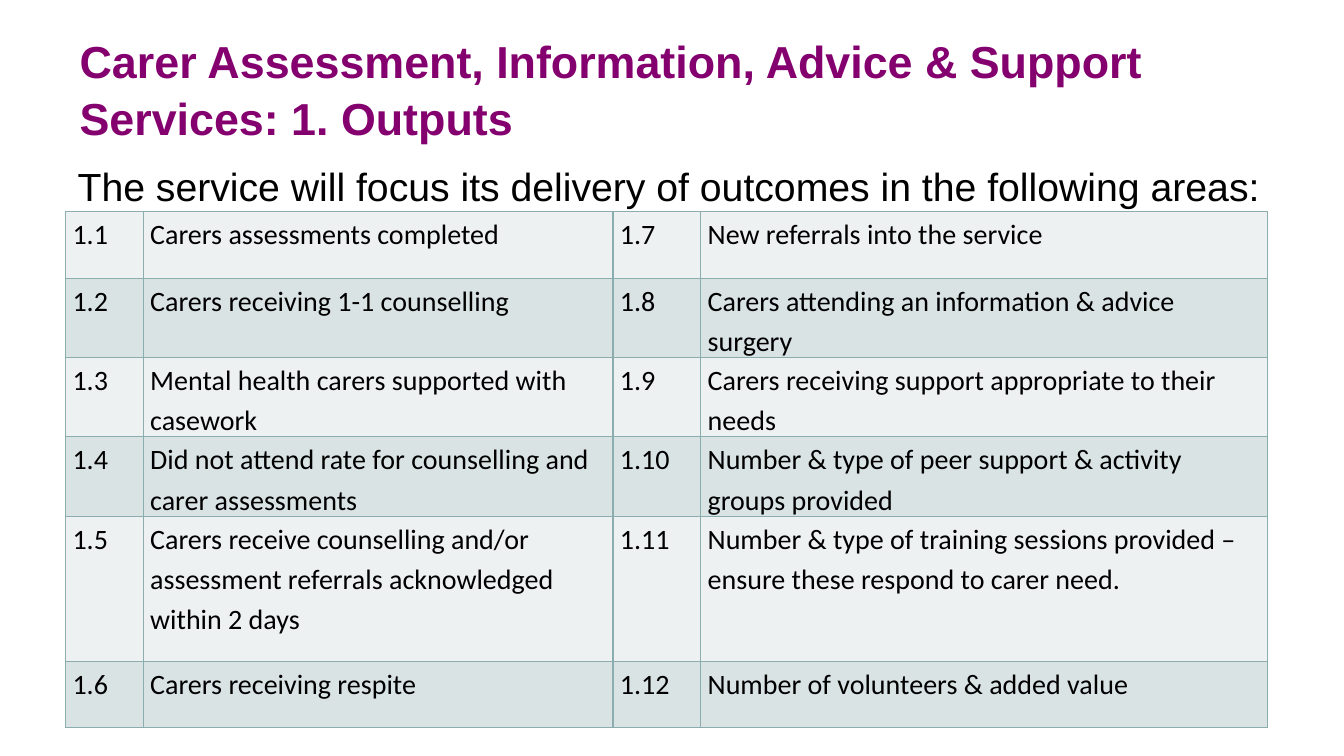
from dataclasses import dataclass

from lxml.etree import SubElement
from pptx import Presentation
from pptx.dml.color import RGBColor
from pptx.enum.text import MSO_ANCHOR
from pptx.oxml.ns import qn
from pptx.util import Inches, Pt


@dataclass(frozen=True)
class Theme:
    heading_font: str = "Arial"
    table_font: str = "Calibri"
    title_size: float = 32
    intro_size: float = 28
    table_size: float = 20
    title_color: str = "84006F"
    text_color: str = "000000"
    border_color: str = "8CADAE"
    bands: tuple = ("EEF1F2", "DAE3E3")


THEME = Theme()

TITLE = "Carer Assessment, Information, Advice & Support Services: 1. Outputs"
INTRO = "The service will focus its delivery of outcomes in the following areas:"
OUTPUTS = [
    "Carers assessments completed",
    "Carers receiving 1-1 counselling",
    "Mental health carers supported with casework",
    "Did not attend rate for counselling and carer assessments",
    "Carers receive counselling and/or assessment referrals acknowledged within 2 days",
    "Carers receiving respite",
    "New referrals into the service",
    "Carers attending an information & advice surgery",
    "Carers receiving support appropriate to their needs",
    "Number & type of peer support & activity groups provided",
    "Number & type of training sessions provided – ensure these respond to carer need.",
    "Number of volunteers & added value",
]
COLUMN_WIDTHS = [0.77, 4.66, 0.87, 5.62]
ROW_HEIGHTS = [0.66, 0.66, 0.66, 0.66, 1.44, 0.66]


def style_runs(p, font, size, color, bold=False):
    for r in p.runs:
        r.font.name = font
        r.font.size = Pt(size)
        r.font.bold = bold
        r.font.color.rgb = RGBColor.from_string(color)


def add_text(slide, box, text, size, color, bold=False,
             anchor=MSO_ANCHOR.TOP, inset=0.06, spacing=1.0):
    sp = slide.shapes.add_textbox(*map(Inches, box))
    tf = sp.text_frame
    tf.word_wrap = True
    tf.vertical_anchor = anchor
    tf.margin_left = tf.margin_right = Inches(0.12)
    tf.margin_top = tf.margin_bottom = Inches(inset)
    p = tf.paragraphs[0]
    p.text = text
    p.line_spacing = spacing
    style_runs(p, THEME.heading_font, size, color, bold)


def add_title(slide, box):
    add_text(slide, box, TITLE, THEME.title_size, THEME.title_color,
             bold=True, anchor=MSO_ANCHOR.MIDDLE, spacing=1.05)


def add_intro(slide, box):
    add_text(slide, box, INTRO, THEME.intro_size, THEME.text_color, inset=0.1)


def add_borders(cell):
    tcPr = cell._tc.get_or_add_tcPr()
    for side in ("lnL", "lnR", "lnT", "lnB"):
        ln = SubElement(tcPr, qn(f"a:{side}"), w=str(Pt(1)))
        fill = SubElement(ln, qn("a:solidFill"))
        SubElement(fill, qn("a:srgbClr"), val=THEME.border_color)


def fill_cell(cell, text, band):
    add_borders(cell)
    cell.fill.solid()
    cell.fill.fore_color.rgb = RGBColor.from_string(band)
    cell.margin_left = cell.margin_right = Inches(0.07)
    cell.margin_top = cell.margin_bottom = 0
    p = cell.text_frame.paragraphs[0]
    p.text = text
    p.line_spacing = 1.18
    p.space_after = Pt(6)
    style_runs(p, THEME.table_font, THEME.table_size, THEME.text_color)


def add_outputs_table(slide, box):
    rows = len(ROW_HEIGHTS)
    table = slide.shapes.add_table(rows, len(COLUMN_WIDTHS), *map(Inches, box)).table
    table.first_row = False
    for column, width in zip(table.columns, COLUMN_WIDTHS):
        column.width = Inches(width)
    for row, height in zip(table.rows, ROW_HEIGHTS):
        row.height = Inches(height)
    for i, output in enumerate(OUTPUTS):
        half, row = divmod(i, rows)
        band = THEME.bands[row % 2]
        fill_cell(table.cell(row, 2 * half), f"1.{i + 1}", band)
        fill_cell(table.cell(row, 2 * half + 1), output, band)


def main():
    prs = Presentation()
    prs.slide_width = Inches(13.33)
    prs.slide_height = Inches(7.5)
    slide = prs.slides.add_slide(prs.slide_layouts[6])
    add_title(slide, (0.67, -0.03, 12, 1.8))
    add_intro(slide, (0.65, 1.51, 12.01, 4.62))
    add_outputs_table(slide, (0.65, 2.1, sum(COLUMN_WIDTHS), sum(ROW_HEIGHTS)))
    prs.save("out.pptx")


if __name__ == "__main__":
    main()
